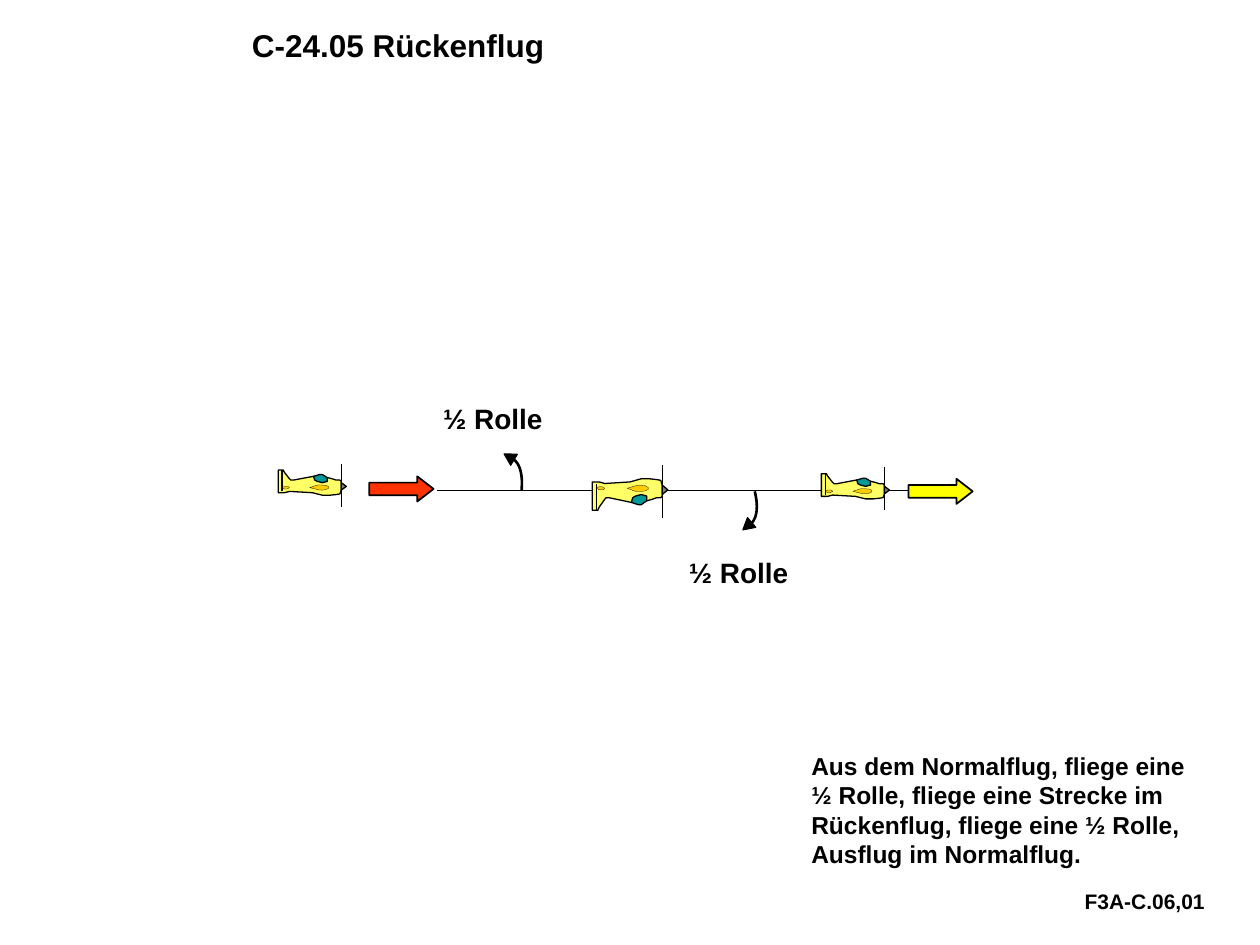
from dataclasses import dataclass

from lxml.etree import SubElement
from pptx import Presentation
from pptx.dml.color import RGBColor
from pptx.enum.shapes import MSO_CONNECTOR as Connector, MSO_SHAPE as Shape
from pptx.enum.text import MSO_ANCHOR as Anchor, PP_ALIGN as Align
from pptx.oxml.ns import qn
from pptx.util import Pt


@dataclass(frozen=True)
class Theme:
    """Colours, type sizes and line widths of the slide."""
    font: str = "Arial"
    ink: str = "000000"
    paper: str = "FFFFFF"
    body: str = "FFFF66"
    canopy: str = "009999"
    wing: str = "FFCC00"
    spinner: str = "808080"
    entry: str = "FF3300"
    leave: str = "FFFF00"
    title_size: int = 18
    label_size: int = 16
    note_size: int = 14
    code_size: int = 12
    hairline: float = 0.13
    thin: float = 0.75
    medium: float = 1
    thick: float = 1.5


@dataclass(frozen=True)
class Box:
    """A rectangle in points."""
    left: float
    top: float
    width: float
    height: float

    def inner(self, left, top, width, height):
        """Return a box placed relative to this one."""
        return Box(self.left + left, self.top + top, width, height)

    def points(self):
        """Return the box as lengths."""
        return Pt(self.left), Pt(self.top), Pt(self.width), Pt(self.height)


THEME = Theme()
PLANE_WIDTH, PLANE_HEIGHT = 50, 20
PLANE_PARTS = [
    (THEME.body, THEME.thin, [
        (39, 6), (43, 7), (46, 8), (49, 8), (50, 9), (50, 16), (49, 19), (46, 19.5),
        (41, 20), (35, 20), (27, 18), (9, 17), (5, 18), (0, 18), (0, 0), (4, 0),
        (5, 2), (9, 7), (10, 8), (12, 8), (28, 5), (30, 8), (35, 9), (37, 9)]),
    (THEME.canopy, THEME.thin, [
        (28, 5), (29, 8), (31, 9), (35, 10), (39, 9), (39, 6), (35, 3.5), (33, 3.5)]),
    (THEME.wing, THEME.hairline, [
        (25, 14), (31, 12), (35, 12), (38, 12.3), (40, 13.2), (40, 14.5),
        (38, 15.5), (35, 16), (32, 15.8)]),
    (THEME.wing, THEME.hairline, [
        (3, 14), (5, 15), (7, 15), (9, 14), (8, 13), (5, 13)]),
]


def style(shape, fill, line, width=THEME.thin):
    """Give a shape its fill and line, where None means neither."""
    shape.shadow.inherit = False
    if fill:
        shape.fill.solid()
        shape.fill.fore_color.rgb = RGBColor.from_string(fill)
    else:
        shape.fill.background()
    if line:
        shape.line.color.rgb = RGBColor.from_string(line)
        shape.line.width = Pt(width)
    else:
        shape.line.fill.background()


def add_preset(slide, box, preset, fill, line=THEME.ink, width=THEME.thin, rotation=0):
    """Add a styled preset shape."""
    shape = slide.shapes.add_shape(preset, *box.points())
    style(shape, fill, line, width)
    shape.rotation = rotation
    return shape


def add_line(slide, start, end):
    """Add a thin straight line."""
    connector = slide.shapes.add_connector(
        Connector.STRAIGHT, *(Pt(value) for value in (*start, *end)))
    connector.line.color.rgb = RGBColor.from_string(THEME.ink)
    connector.line.width = Pt(THEME.thin)
    SubElement(connector._element.spPr, qn("a:effectLst"))


def add_outline(slide, points, fill, width, close=True):
    """Add a freeform through the given points."""
    start, *others = [(Pt(x), Pt(y)) for x, y in points]
    builder = slide.shapes.build_freeform(*start)
    builder.add_line_segments(others, close=close)
    style(builder.convert_to_shape(), fill, THEME.ink, width)


def write(shape, text, size, margins=(7.2, 3.6)):
    """Write one bold, left-aligned paragraph into a shape."""
    frame = shape.text_frame
    frame.word_wrap = True
    frame.vertical_anchor = Anchor.TOP
    frame.margin_left = frame.margin_right = Pt(margins[0])
    frame.margin_top = frame.margin_bottom = Pt(margins[1])
    paragraph = frame.paragraphs[0]
    paragraph.alignment = Align.LEFT
    run = paragraph.add_run()
    run.text = text
    run.font.name = THEME.font
    run.font.size = Pt(size)
    run.font.bold = True
    run.font.color.rgb = RGBColor.from_string(THEME.ink)


def add_text(slide, box, text, size, margins=(7.2, 3.6)):
    """Add a text box."""
    write(slide.shapes.add_textbox(*box.points()), text, size, margins)


def add_note(slide, box, text):
    """Add the description of the manoeuvre on a plain panel."""
    panel = add_preset(slide, box, Shape.RECTANGLE, THEME.paper, None)
    write(panel, text, THEME.note_size)


def add_plane(slide, box, inverted=False):
    """Draw a side view of the aeroplane, upright or inverted."""
    scale_x, scale_y = box.width / PLANE_WIDTH, box.height / PLANE_HEIGHT

    def place(point):
        """Map a point of the plane grid into the box."""
        x, y = point
        row = PLANE_HEIGHT - y if inverted else y
        return box.left + x * scale_x, box.top + row * scale_y

    for fill, width, points in PLANE_PARTS:
        add_outline(slide, [place(point) for point in points], fill, width)
    add_line(slide, place((3, 0)), place((3, 17)))
    center_x, center_y = place((52, 13))
    width, height = 6 * scale_y, 4 * scale_x
    spinner = Box(center_x - width / 2, center_y - height / 2, width, height)
    add_preset(slide, spinner, Shape.ISOSCELES_TRIANGLE, THEME.spinner, rotation=90)
    add_line(slide, place((50, -5)), place((50, 29)))


def add_roll(slide, box, controls, head, rotation):
    """Draw a curved roll arrow from four Bézier points and a head position."""
    steps = 16
    curve = []
    for step in range(steps + 1):
        t = step / steps
        weights = ((1 - t) ** 3, 3 * t * (1 - t) ** 2, 3 * t * t * (1 - t), t ** 3)
        x, y = (sum(w * c for w, c in zip(weights, axis)) for axis in zip(*controls))
        curve.append((box.left + x, box.top + y))
    add_outline(slide, curve, None, THEME.thick, close=False)
    add_preset(slide, box.inner(*head, 7.2, 6.5), Shape.ISOSCELES_TRIANGLE,
               THEME.ink, rotation=rotation)


def add_direction(slide, box, fill):
    """Add a block arrow that shows the direction of flight."""
    arrow = add_preset(slide, box, Shape.RIGHT_ARROW, fill, width=THEME.medium)
    arrow.adjustments[0], arrow.adjustments[1] = 0.5, 0.645


def add_manoeuvre(slide, box):
    """Draw the flight line with its planes, rolls, arrows and labels."""
    line_y = box.top + 54.1
    add_line(slide, (box.left + 90.8, line_y), (box.left + 365.9, line_y))
    add_roll(slide, box, [(139.1, 54.1), (139.8, 45.4), (138.4, 39), (134, 36.1)],
             (128.3, 31.8), 301)
    add_roll(slide, box, [(272.3, 54.8), (274.4, 63.4), (273.7, 69.9), (270.1, 73.5)],
             (264.4, 71.4), 230)
    add_plane(slide, box.inner(0, 42.6, 36, 14.4))
    add_plane(slide, box.inner(179.4, 47.6, 40, 18), inverted=True)
    add_plane(slide, box.inner(310.4, 44.7, 36, 14.4))
    for left, top, fill in ((52, 46.2, THEME.entry), (360.1, 47.6, THEME.leave)):
        add_direction(slide, box.inner(left, top, 36.7, 14.4), fill)
    for left, top in ((87.2, 0), (227.6, 87.9)):
        add_text(slide, box.inner(left, top, 97.2, 26.6), "½ Rolle", THEME.label_size)


def main():
    """Build and save the slide."""
    presentation = Presentation()
    presentation.slide_width, presentation.slide_height = Pt(720), Pt(540)
    slide = presentation.slides.add_slide(presentation.slide_layouts[6])
    add_text(slide, Box(137.5, 12.2, 471, 28), "C-24.05 Rückenflug",
             THEME.title_size, (6.5, 2.9))
    add_text(slide, Box(612.7, 504, 95, 21.6), "F3A-C.06,01", THEME.code_size)
    add_manoeuvre(slide, Box(159, 226, 397, 115))
    add_note(slide, Box(456.5, 425.5, 234, 74.9),
             "Aus dem Normalflug, fliege eine ½ Rolle, fliege eine Strecke im "
             "Rückenflug, fliege eine ½ Rolle, Ausflug im Normalflug.")
    presentation.save("out.pptx")


if __name__ == "__main__":
    main()
